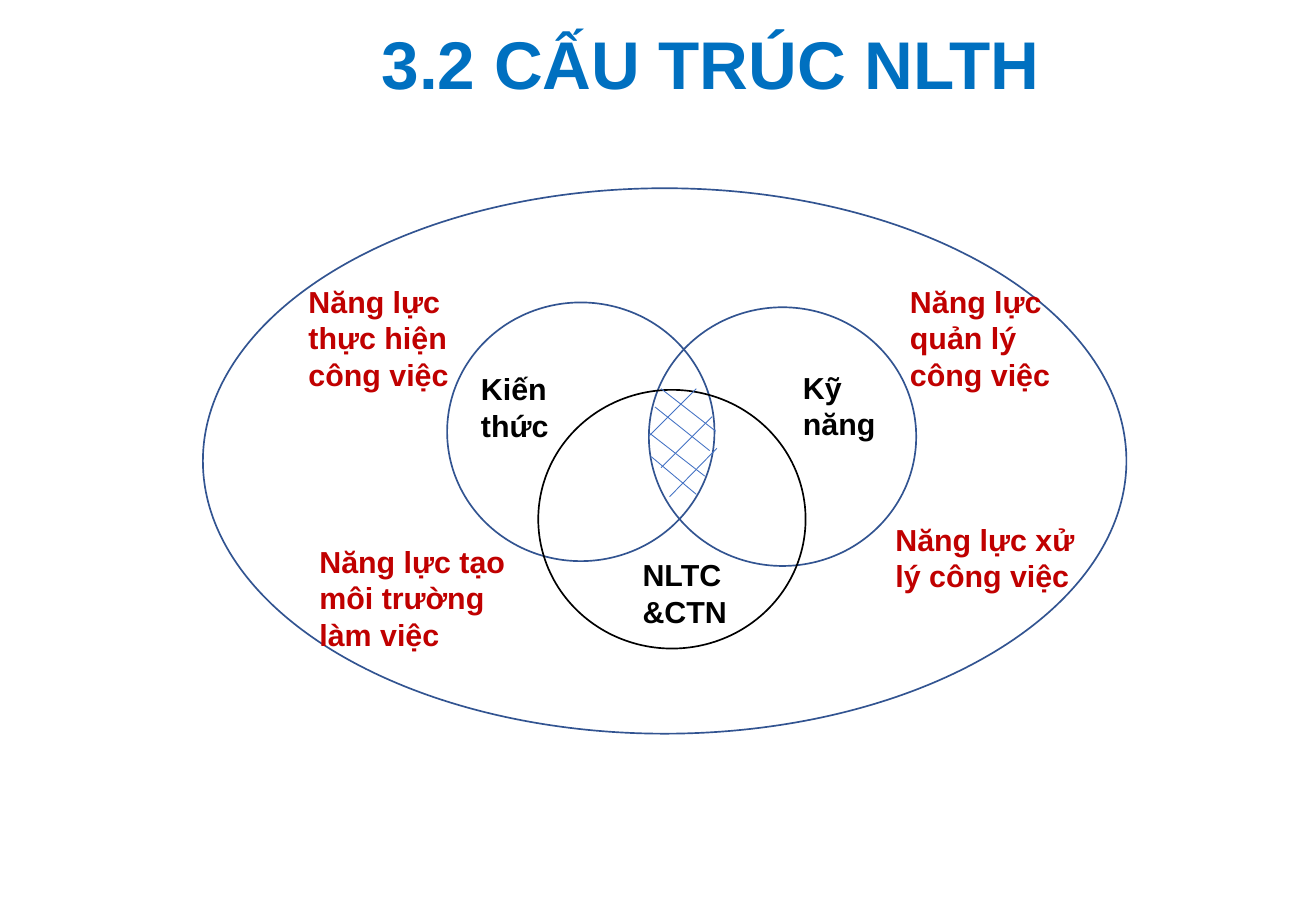
from pptx import Presentation
from pptx.dml.color import RGBColor
from pptx.enum.shapes import MSO_CONNECTOR, MSO_SHAPE
from pptx.enum.text import MSO_ANCHOR, PP_ALIGN
from pptx.util import Inches, Pt
from lxml.etree import SubElement
from pptx.oxml.ns import qn

# Content
FONT = "Arial"
COLORS = {"title": "0070C0", "ring": "325491", "hatch": "4472C4",
          "black": "000000", "red": "C00000"}
TITLE = "3.2 CẤU TRÚC NLTH"

# Ellipses: left, top, width, height, colour
CIRCLE = (2.2, 2.13)
RINGS = [
    (3.68, 2.49, *CIRCLE, "ring"),
    (5.34, 2.53, *CIRCLE, "ring"),
    (4.43, 3.21, *CIRCLE, "black"),
    (1.67, 1.55, 7.6, 4.49, "ring"),
]

# Hatching of the overlap: x1, y1, x2, y2
HATCH = [
    (5.34, 3.59, 5.73, 3.2), (5.44, 3.85, 5.86, 3.43),
    (5.51, 4.09, 5.9, 3.69), (5.44, 3.2, 5.89, 3.55),
    (5.39, 3.35, 5.84, 3.71), (5.35, 3.57, 5.8, 3.92),
    (5.36, 3.76, 5.73, 4.07),
]

# Labels: text, left, top, width, height, colour
LABELS = [
    ("Kiến thức", 3.86, 3, 0.94, 0.71, "black"),
    ("Kỹ năng", 6.51, 2.99, 0.94, 0.71, "black"),
    ("NLTC &CTN", 5.19, 4.53, 0.94, 0.71, "black"),
    ("Năng lực thực hiện công việc", 2.44, 2.28, 1.71, 1.01, "red"),
    ("Năng lực quản lý công việc", 7.39, 2.28, 1.71, 1.01, "red"),
    ("Năng lực xử lý công việc", 7.27, 4.24, 1.71, 0.71, "red"),
    ("Năng lực tạo môi trường làm việc", 2.53, 4.42, 1.91, 1.01, "red"),
]


def color(name):
    return RGBColor.from_string(COLORS[name])


def place(shape, *box):
    shape.left, shape.top, shape.width, shape.height = map(Inches, box)


def write(shape, text, size, name):
    frame = shape.text_frame
    frame.word_wrap = True
    frame.vertical_anchor = MSO_ANCHOR.TOP
    para = frame.paragraphs[0]
    para.alignment = PP_ALIGN.LEFT
    para.line_spacing = 1.0
    para.space_before = Pt(0)
    run = para.add_run()
    run.text = text
    font = run.font
    font.name, font.size, font.bold = FONT, Pt(size), True
    font.color.rgb = color(name)


def stroke(shape, name, width):
    shape.line.color.rgb = color(name)
    shape.line.width = Pt(width)


def main():
    deck = Presentation()
    deck.slide_width, deck.slide_height = Inches(10.83), Inches(7.5)
    slide = deck.slides.add_slide(deck.slide_layouts[5])
    shapes = slide.shapes

    # Title
    place(shapes.title, 3.04, 0.13, 5.76, 0.77)
    write(shapes.title, TITLE, 40, "title")

    # Circles and outer ellipse
    for *box, name in RINGS:
        ring = shapes.add_shape(MSO_SHAPE.OVAL, *map(Inches, box))
        ring.shadow.inherit = False
        ring.fill.background()
        stroke(ring, name, 1)

    # Hatching
    for ends in HATCH:
        line = shapes.add_connector(MSO_CONNECTOR.STRAIGHT, *map(Inches, ends))
        stroke(line, "hatch", 0.5)
        SubElement(line._element.spPr, qn("a:effectLst"))

    # Labels
    for text, *box, name in LABELS:
        label = shapes.add_textbox(*map(Inches, box))
        write(label, text, 18, name)

    deck.save("out.pptx")


if __name__ == "__main__":
    main()
